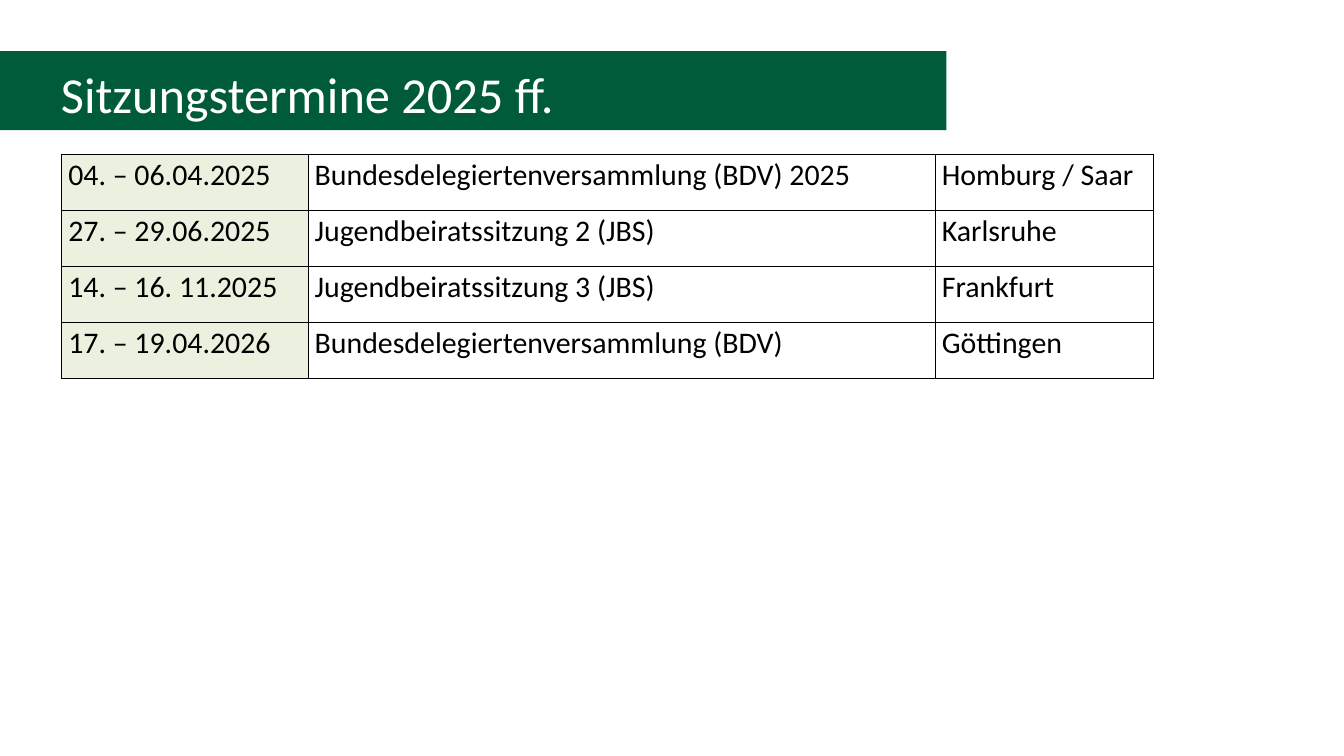
import pptx
import pptx.dml.color
import pptx.enum.text
import pptx.oxml
import pptx.oxml.ns
import pptx.util

PX = 9525  # EMU per px, 96 px to the inch
FONT = "Calibri"
COLORS = {
    "banner": "005B38",
    "title": "FFFFFF",
    "date": "EBF1DE",
    "cell": "FFFFFF",
    "text": "000000",
    "border": "000000",
}
COLUMN_WIDTHS = [352, 896, 312]
ROW_HEIGHT = 80
MEETINGS = [
    ("04. – 06.04.2025", "Bundesdelegiertenversammlung (BDV) 2025", "Homburg / Saar"),
    ("27. – 29.06.2025", "Jugendbeiratssitzung 2 (JBS)", "Karlsruhe"),
    ("14. – 16. 11.2025", "Jugendbeiratssitzung 3 (JBS)", "Frankfurt"),
    ("17. – 19.04.2026", "Bundesdelegiertenversammlung (BDV)", "Göttingen"),
]


def px(n):
    return pptx.util.Emu(n * PX)


def rgb(name):
    return pptx.dml.color.RGBColor.from_string(COLORS[name])


def a_element(xml):
    return pptx.oxml.parse_xml(xml.replace(">", f" {pptx.oxml.ns.nsdecls('a')}>", 1))


def add_text(tf, text, size, color):
    p = tf.paragraphs[0]
    p.alignment = pptx.enum.text.PP_ALIGN.LEFT
    r = p.add_run()
    r.text = text
    r.font.name = FONT
    r.font.size = pptx.util.Pt(size)
    r.font.color.rgb = rgb(color)


def format_title(sp, text):
    """Turn the title placeholder into a rounded banner that bleeds off the left edge."""
    sp.left, sp.top, sp.width, sp.height = px(-72), px(73), px(1424), px(113)
    sp._element.spPr.append(a_element('<a:prstGeom prst="roundRect"><a:avLst/></a:prstGeom>'))
    sp.fill.solid()
    sp.fill.fore_color.rgb = rgb("banner")
    tf = sp.text_frame
    tf.word_wrap = True
    tf.auto_size = pptx.enum.text.MSO_AUTO_SIZE.NONE
    tf.vertical_anchor = pptx.enum.text.MSO_ANCHOR.MIDDLE
    tf.margin_left = px(159)
    tf.margin_top, tf.margin_bottom = px(8), px(0)
    add_text(tf, text, 54, "title")


def add_borders(cell):
    tc_pr = cell._tc.get_or_add_tcPr()
    for i, side in enumerate("LRTB"):
        line = a_element(
            f'<a:ln{side} w="12700"><a:solidFill>'
            f'<a:srgbClr val="{COLORS["border"]}"/></a:solidFill></a:ln{side}>'
        )
        tc_pr.insert(i, line)


def add_meeting_table(slide, left, top):
    table = slide.shapes.add_table(
        len(MEETINGS), len(COLUMN_WIDTHS), px(left), px(top),
        px(sum(COLUMN_WIDTHS)), px(ROW_HEIGHT * len(MEETINGS)),
    ).table
    table.first_row = table.horz_banding = False
    for column, width in zip(table.columns, COLUMN_WIDTHS):
        column.width = px(width)
    for row, meeting in zip(table.rows, MEETINGS):
        row.height = px(ROW_HEIGHT)
        for i, (cell, text) in enumerate(zip(row.cells, meeting)):
            cell.fill.solid()
            cell.fill.fore_color.rgb = rgb("date" if i == 0 else "cell")
            add_borders(cell)
            add_text(cell.text_frame, text, 32, "text")


def main():
    prs = pptx.Presentation()
    prs.slide_width, prs.slide_height = px(1920), px(1080)
    slide = prs.slides.add_slide(prs.slide_layouts[5])
    format_title(slide.shapes.title, "Sitzungstermine 2025 ff.")
    add_meeting_table(slide, 88, 220)
    prs.save("out.pptx")


if __name__ == "__main__":
    main()
